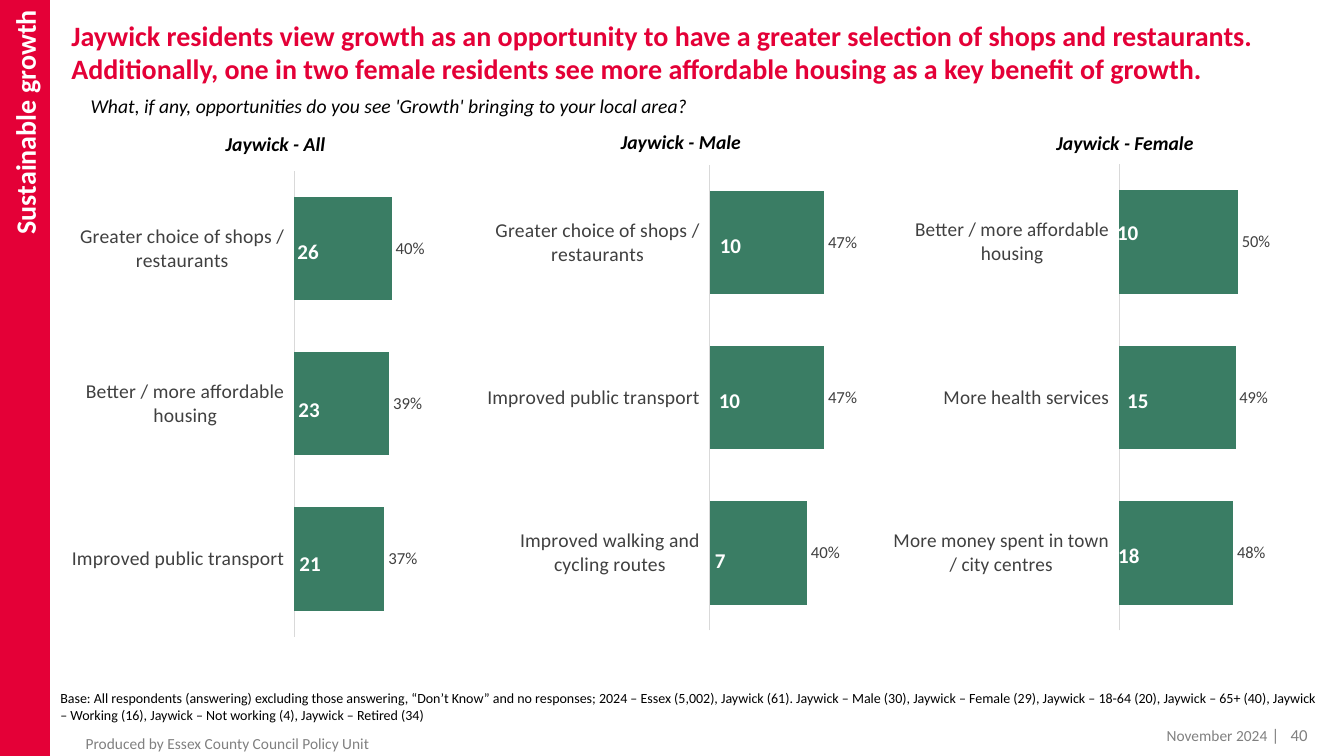
from lxml import etree
from pptx import Presentation
from pptx.chart.data import CategoryChartData
from pptx.dml.color import RGBColor
from pptx.enum.chart import XL_CHART_TYPE, XL_LABEL_POSITION, XL_TICK_LABEL_POSITION, XL_TICK_MARK
from pptx.enum.shapes import MSO_SHAPE
from pptx.enum.text import MSO_ANCHOR, PP_ALIGN
from pptx.oxml import parse_xml
from pptx.oxml.ns import nsdecls
from pptx.util import Inches, Pt

RED = RGBColor(0xE4, 0x00, 0x37)
GREEN = RGBColor(0x3A, 0x7D, 0x64)
WHITE = RGBColor(0xFF, 0xFF, 0xFF)
BLACK = RGBColor(0x00, 0x00, 0x00)
DARK_GREY = RGBColor(0x40, 0x40, 0x40)
MID_GREY = RGBColor(0x80, 0x80, 0x80)
LIGHT_GREY = RGBColor(0xD9, 0xD9, 0xD9)
FONT = "Calibri"

SECTION = "Sustainable growth"
TITLE = (
    "Jaywick residents view growth as an opportunity to have a greater selection of shops "
    "and restaurants. Additionally, one in two female residents see more affordable housing "
    "as a key benefit of growth."
)
QUESTION = "What, if any, opportunities do you see 'Growth' bringing to your local area?"
BASE = (
    "Base: All respondents (answering) excluding those answering, “Don’t Know” and no "
    "responses; 2024 – Essex (5,002), Jaywick (61). Jaywick – Male (30), Jaywick – Female "
    "(29), Jaywick – 18-64 (20), Jaywick – 65+ (40), Jaywick – Working (16), Jaywick – Not "
    "working (4), Jaywick – Retired (34)"
)
PRODUCER = "Produced by Essex County Council Policy Unit"
DATE = "November 2024"
PAGE = "40"

# Each bar: category, share, respondent count, left and top of the count
PANELS = [
    {
        "heading": "Jaywick - All",
        "heading_box": (2.14, 1.26, 1.37, 0.34),
        "chart_corner": (0.59, 1.43),
        "plot_corner": (0.547, 0.054),
        "bars": [
            ("Greater choice of shops / restaurants", 0.40, "26", 2.95, 2.37),
            ("Better / more affordable housing", 0.39, "23", 2.96, 3.93),
            ("Improved public transport", 0.37, "21", 2.97, 5.46),
        ],
    },
    {
        "heading": "Jaywick - Male",
        "heading_box": (6.06, 1.24, 2.24, 0.34),
        "chart_corner": (4.71, 1.37),
        "plot_corner": (0.547, 0.054),
        "bars": [
            ("Greater choice of shops / restaurants", 0.47, "10", 7.14, 2.31),
            ("Improved public transport", 0.47, "10", 7.13, 3.84),
            ("Improved walking and cycling routes", 0.40, "7", 7.09, 5.43),
        ],
    },
    {
        "heading": "Jaywick - Female",
        "heading_box": (10.38, 1.25, 2.24, 0.34),
        "chart_corner": (8.86, 1.62),
        "plot_corner": (0.515, 0.002),
        "bars": [
            ("Better / more affordable housing", 0.50, "10", 11.08, 2.18),
            ("More health services", 0.49, "15", 11.18, 3.84),
            ("More money spent in town / city centres", 0.48, "18", 11.09, 5.38),
        ],
    },
]
CHART_SIZE = (4.26, 4.89)
PLOT_SIZE = (0.453, 0.946)
COUNT_SIZE = (0.33, 0.22)


def style_font(font, size, color, bold=False, italic=False):
    font.name = FONT
    font.size = Pt(size)
    font.color.rgb = color
    font.bold = bold
    font.italic = italic


def set_margins(frame, margins):
    """Set the left, top, right and bottom margins, in inches."""
    frame.margin_left, frame.margin_top, frame.margin_right, frame.margin_bottom = map(Inches, margins)


def add_text(slide, box, runs, size, color, bold=False, italic=False, align=PP_ALIGN.LEFT,
             anchor=MSO_ANCHOR.TOP, margins=(0.1, 0.05, 0.1, 0.05)):
    """Add a one-paragraph text box and return the paragraph."""
    frame = slide.shapes.add_textbox(*map(Inches, box)).text_frame
    frame.word_wrap = True
    frame.vertical_anchor = anchor
    set_margins(frame, margins)
    paragraph = frame.paragraphs[0]
    paragraph.alignment = align
    for text in runs:
        run = paragraph.add_run()
        run.text = text
        style_font(run.font, size, color, bold, italic)
    return paragraph


def add_section_band(slide):
    band = slide.shapes.add_shape(MSO_SHAPE.RECTANGLE, 0, 0, Inches(0.49), Inches(7.5))
    band.shadow.inherit = False
    band.fill.solid()
    band.fill.fore_color.rgb = RED
    band.line.color.rgb = RED
    band.line.width = Pt(1)
    frame = band.text_frame
    set_margins(frame, (0.1, 0.1, 0.1, 0.05))
    frame.vertical_anchor = MSO_ANCHOR.MIDDLE
    frame._txBody.bodyPr.set("vert", "vert270")
    paragraph = frame.paragraphs[0]
    paragraph.alignment = PP_ALIGN.RIGHT
    run = paragraph.add_run()
    run.text = SECTION
    style_font(run.font, 20, WHITE, bold=True)


def place_plot(chart, corner):
    """Fix the inner plot area, as fractions of the chart."""
    plot_area = chart._chartSpace.chart.plotArea
    for old_layout in plot_area.findall("{*}layout"):
        plot_area.remove(old_layout)
    layout = parse_xml(f"<c:layout {nsdecls('c')}><c:manualLayout/></c:layout>")
    settings = [("layoutTarget", "inner"), ("xMode", "edge"), ("yMode", "edge")]
    settings += zip("xywh", corner + PLOT_SIZE)
    namespace = etree.QName(layout).namespace
    for name, value in settings:
        etree.SubElement(layout[0], f"{{{namespace}}}{name}").set("val", str(value))
    plot_area.insert(0, layout)


def add_bar_chart(slide, panel):
    data = CategoryChartData(number_format="0%")
    data.categories = [bar[0] for bar in panel["bars"]]
    data.add_series("Series 1", [bar[1] for bar in panel["bars"]])
    box = panel["chart_corner"] + CHART_SIZE
    chart = slide.shapes.add_chart(XL_CHART_TYPE.BAR_CLUSTERED, *map(Inches, box), data).chart
    style_font(chart.font, 10, BLACK)
    chart.has_legend = False
    chart.has_title = False

    categories = chart.category_axis
    categories.reverse_order = True
    categories.major_tick_mark = XL_TICK_MARK.NONE
    categories.tick_label_position = XL_TICK_LABEL_POSITION.LOW
    categories.format.line.color.rgb = LIGHT_GREY
    categories.format.line.width = Pt(0.75)
    style_font(categories.tick_labels.font, 14, DARK_GREY)

    values = chart.value_axis
    values.minimum_scale = 0
    values.maximum_scale = 0.8
    values.has_major_gridlines = False
    values.visible = False

    plot = chart.plots[0]
    plot.gap_width = 50
    plot.vary_by_categories = False
    fill = plot.series[0].format.fill
    fill.solid()
    fill.fore_color.rgb = GREEN
    labels = plot.series[0].data_labels
    labels.show_value = True
    labels.number_format = "0%"
    labels.number_format_is_linked = False
    labels.position = XL_LABEL_POSITION.OUTSIDE_END
    style_font(labels.font, 12, DARK_GREY)
    place_plot(chart, panel["plot_corner"])


def add_panel(slide, panel):
    add_bar_chart(slide, panel)
    heading = add_text(slide, panel["heading_box"], [panel["heading"]], 14, BLACK, bold=True, italic=True)
    heading.space_before = Pt(6)
    for _, _, count, left, top in panel["bars"]:
        add_text(slide, (left, top) + COUNT_SIZE, [count], 15, WHITE, bold=True, margins=(0, 0, 0, 0))


def add_footer(slide):
    add_text(slide, (0.5, 6.79, 12.71, 0.44), [BASE], 10, BLACK)
    add_text(slide, (0.76, 7.3, 6.54, 0.15), [PRODUCER], 11, MID_GREY,
             anchor=MSO_ANCHOR.MIDDLE, margins=(0.09, 0.05, 0.1, 0.05))
    add_text(slide, (10.27, 7.15, 2.4, 0.15), [DATE], 11, MID_GREY, align=PP_ALIGN.RIGHT)
    number = add_text(slide, (12.12, 7.21, 0.85, 0.15), ["|", " ", PAGE], 12, MID_GREY,
                      align=PP_ALIGN.RIGHT, anchor=MSO_ANCHOR.MIDDLE, margins=(0.1, 0.05, 0, 0.05))
    number.runs[1]._r.get_or_add_rPr().set("spc", "540")


def main():
    presentation = Presentation()
    presentation.slide_width = Inches(13.33)
    presentation.slide_height = Inches(7.5)
    slide = presentation.slides.add_slide(presentation.slide_layouts[6])
    add_section_band(slide)
    add_text(slide, (0.61, 0.13, 12.9, 1.31), [TITLE], 20, RED, bold=True, margins=(0.1, 0.05, 0.1, 0))
    add_text(slide, (0.8, 0.88, 6.54, 0.34), [QUESTION], 14, BLACK, italic=True)
    for panel in PANELS:
        add_panel(slide, panel)
    add_footer(slide)
    presentation.save("out.pptx")


if __name__ == "__main__":
    main()
